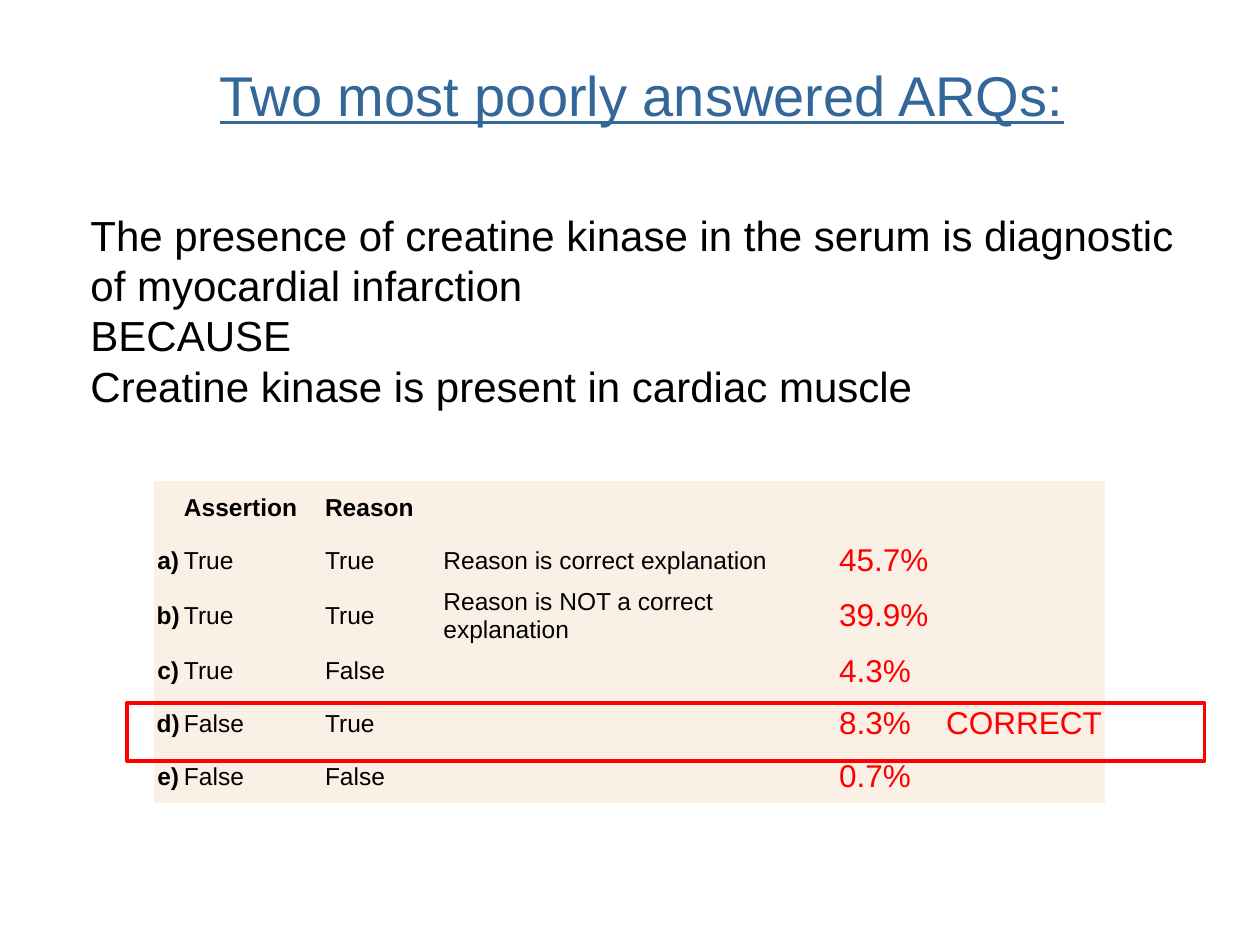
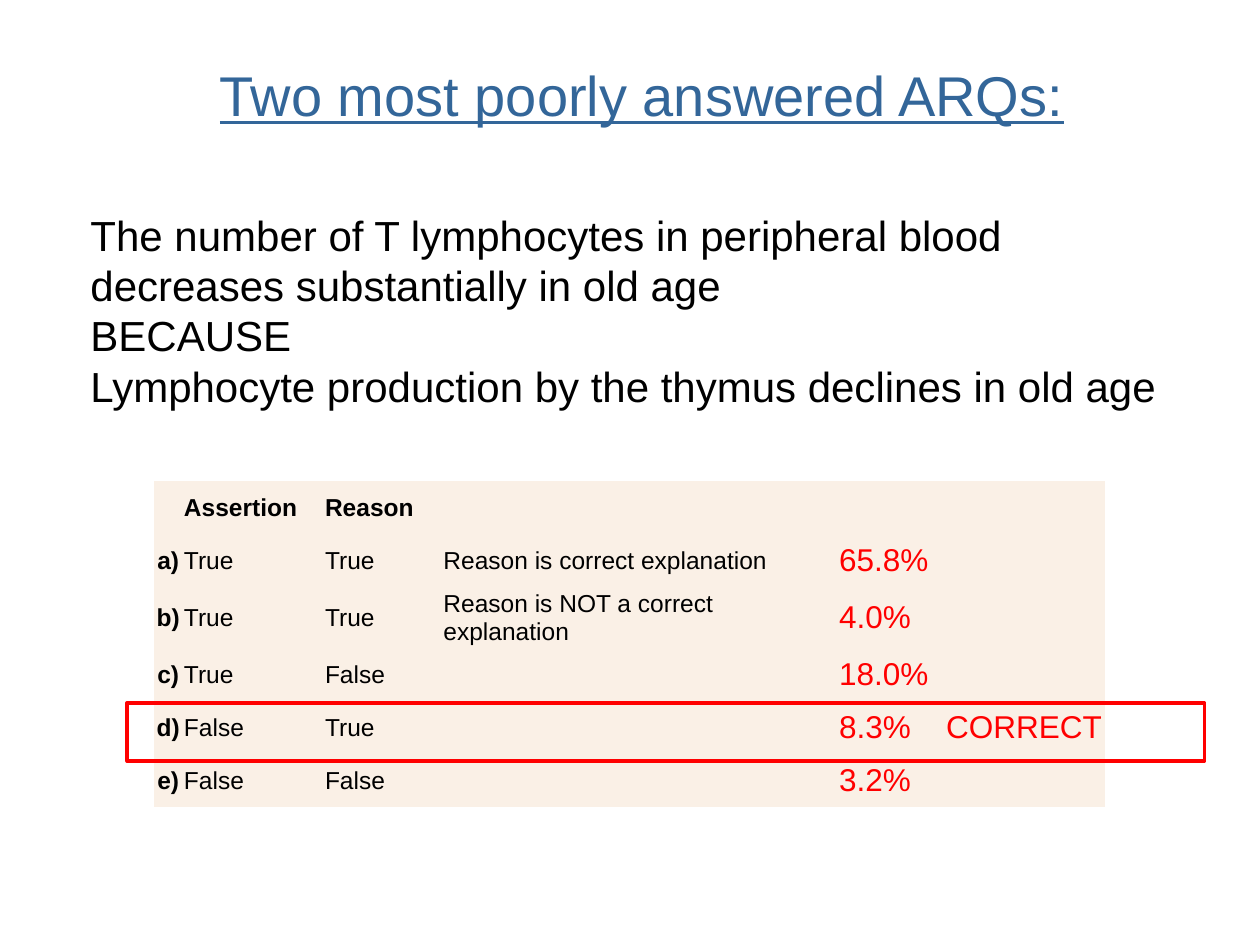
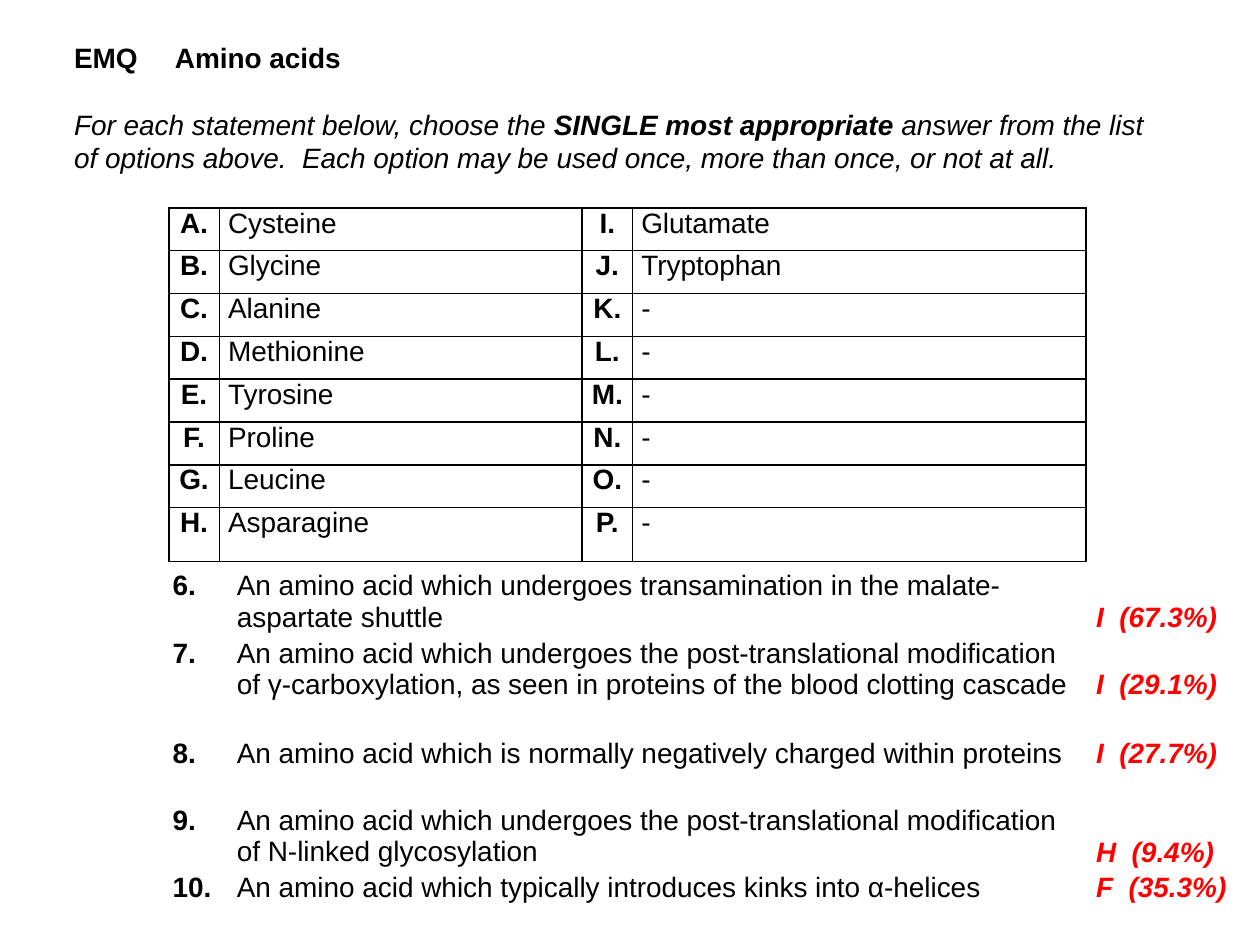
import pptx
import pptx.dml.color
import pptx.enum.shapes
import pptx.enum.text
import pptx.oxml
import pptx.oxml.ns
import pptx.util

Inches = pptx.util.Inches
Pt = pptx.util.Pt
Align = pptx.enum.text.PP_ALIGN
Anchor = pptx.enum.text.MSO_ANCHOR

HUES = {"ink": "000000", "title": "336699", "red": "FF0000", "linen": "FAF0E6"}
FACE = "Arial"
LEAD = 1.2
PLAIN = "{2D5ABB26-0587-4C30-8999-92F81FD0307C}"
NS = pptx.oxml.ns.nsdecls("a")

LOOKS = {
    "title": {"size": Pt(32), "underline": True},
    "body": {"size": Pt(24)},
    "cell": {"size": Pt(14)},
    "label": {"size": Pt(14), "bold": True},
    "score": {"size": Pt(18)},
    "text": {"size": Pt(16)},
    "strong": {"size": Pt(16), "bold": True},
    "slant": {"size": Pt(16), "italic": True},
    "key": {"size": Pt(16), "bold": True, "italic": True},
}
TINTS = {"title": "title", "score": "red"}

CHOICES = [
    ("", "Assertion", "Reason", ""),
    ("a)", "True", "True", "Reason is correct explanation"),
    ("b)", "True", "True", "Reason is NOT a correct explanation"),
    ("c)", "True", "False", ""),
    ("d)", "False", "True", ""),
    ("e)", "False", "False", ""),
]
RIGHT = 4

ITEMS = [
    (("The presence of creatine kinase in the serum is diagnostic of myocardial infarction",
      "BECAUSE", "Creatine kinase is present in cardiac muscle"),
     ("", "45.7%", "39.9%", "4.3%", "8.3%\tCORRECT", "0.7%")),
    (("The number of T lymphocytes in peripheral blood decreases substantially in old age",
      "BECAUSE", "Lymphocyte production by the thymus declines in old age"),
     ("", "65.8%", "4.0%", "18.0%", "8.3%\tCORRECT", "3.2%")),
]

ACIDS = ["Cysteine", "Glycine", "Alanine", "Methionine", "Tyrosine", "Proline",
         "Leucine", "Asparagine", "Glutamate", "Tryptophan"] + ["-"] * 6

CLUES = [
    ("An amino acid which undergoes transamination in the malate-aspartate shuttle",
     "I  (67.3%)", 0.53, 0.25),
    ("An amino acid which undergoes the post-translational modification of "
     "γ-carboxylation, as seen in proteins of the blood clotting cascade",
     "I  (29.1%)", 0.8, 0.25),
    ("An amino acid which is normally negatively charged within proteins",
     "I  (27.7%)", 0.53, 0),
    ("An amino acid which undergoes the post-translational modification of "
     "N-linked glycosylation", "H  (9.4%)", 0.53, 0.25),
    ("An amino acid which typically introduces kinks into α-helices",
     "F  (35.3%)", 0.43, 0),
]


def apply(item, vals):
    """Set each named value on the item."""
    for name, val in vals.items():
        setattr(item, name, val)


def tone(name):
    """Return a palette colour."""
    return pptx.dml.color.RGBColor.from_string(HUES[name])


def write(para, text, look, hue=None):
    """Add a run in the given look."""
    run = para.add_run()
    run.text = text
    apply(run.font, {"name": FACE, **LOOKS[look]})
    run.font.color.rgb = tone(hue or TINTS.get(look, "ink"))


def stop(para, gap):
    """Add a left tab stop to a paragraph."""
    tabs = pptx.oxml.parse_xml(
        f'<a:tabLst {NS}><a:tab pos="{Inches(gap)}" algn="l"/></a:tabLst>')
    para._p.get_or_add_pPr().append(tabs)


def frame(slide, box, wrap=True):
    """Add a text box and return its frame."""
    area = slide.shapes.add_textbox(*map(Inches, box)).text_frame
    area.word_wrap = wrap
    return area


def lead(para, look, **vals):
    """Space the lines of a paragraph by its text size."""
    apply(para, {"line_spacing": Pt(LOOKS[look]["size"].pt * LEAD), **vals})


def grid(slide, box, cols, rows):
    """Add a plain table with the given column widths and row heights."""
    table = slide.shapes.add_table(len(rows), len(cols), *map(Inches, box)).table
    apply(table, {"first_row": False, "horz_banding": False})
    table._tbl.tblPr.find(pptx.oxml.ns.qn("a:tableStyleId")).text = PLAIN
    for col, wide in zip(table.columns, cols):
        col.width = Inches(wide)
    for row, high in zip(table.rows, rows):
        row.height = Inches(high)
    return table


def fill(cell, text, look, hue=None, align=None, side=0.07, edge=0,
         drop=0, anchor=Anchor.TOP, back=None):
    """Set the text, margins and fill of a cell."""
    apply(cell, {"margin_left": Inches(side), "margin_right": Inches(side),
                 "margin_top": Inches(edge + drop), "margin_bottom": Inches(edge),
                 "vertical_anchor": anchor})
    if back:
        cell.fill.solid()
        cell.fill.fore_color.rgb = tone(back)
    else:
        cell.fill.background()
    para = cell.text_frame.paragraphs[0]
    if align is not None:
        para.alignment = align
    if "\t" in text:
        stop(para, 0.85)
    if text:
        write(para, text, look, hue)


def rule(cell):
    """Draw a thin line on all sides of a cell."""
    props = cell._tc.get_or_add_tcPr()
    for spot, side in enumerate(("lnL", "lnR", "lnT", "lnB")):
        props.insert(spot, pptx.oxml.parse_xml(
            f'<a:{side} {NS} w="{Pt(1)}"><a:solidFill>'
            f'<a:srgbClr val="{HUES["ink"]}"/></a:solidFill></a:{side}>'))


def head(slide, box):
    """Place the shared question title."""
    para = frame(slide, box, False).paragraphs[0]
    lead(para, "title", alignment=Align.CENTER)
    write(para, "Two most poorly answered ARQs:", "title")


def claim(slide, box, lines):
    """Place the assertion and its reason."""
    area = frame(slide, box)
    for num, line in enumerate(lines):
        para = area.add_paragraph() if num else area.paragraphs[0]
        lead(para, "body")
        write(para, line, "body")


def votes(slide, box, scores):
    """Place the answer table and frame the right answer."""
    left, top, wide, high = box
    step = 0.42
    table = grid(slide, box, (0.23, 1.12, 0.94, 3.14, 2.12), [step] * len(CHOICES))
    for row, (words, score) in enumerate(zip(CHOICES, scores)):
        for col, text in enumerate((*words, score)):
            look = "label" if row == 0 or col == 0 else "score" if col == 4 else "cell"
            fill(table.cell(row, col), text, look, side=0.01, edge=0.01,
                 align=None if col else Align.CENTER,
                 anchor=Anchor.MIDDLE, back="linen")
    mark = slide.shapes.add_shape(
        pptx.enum.shapes.MSO_SHAPE.RECTANGLE, Inches(left - 0.21),
        Inches(top + RIGHT * step + 0.08), Inches(wide + 1), Inches(0.46))
    mark.shadow.inherit = False
    mark.fill.background()
    mark.line.color.rgb = tone("red")
    mark.line.width = Pt(2.25)


def intro(slide, box):
    """Place the heading and the task."""
    area = frame(slide, box)
    para = area.paragraphs[0]
    lead(para, "strong")
    stop(para, 0.8)
    write(para, "EMQ\tAmino acids", "strong")
    para = area.add_paragraph()
    lead(para, "slant", space_before=Pt(19.2))
    write(para, "For each statement below, choose the ", "slant")
    write(para, "SINGLE most appropriate", "key")
    write(para, " answer from the list ", "slant")
    para.add_line_break()
    write(para, "of options above.  Each option may be used once, "
          "more than once, or not at all.", "slant")


def acids(slide, box):
    """Place the lettered options in two ruled columns."""
    count = len(ACIDS) // 2
    table = grid(slide, box, (0.4, 2.88, 0.4, 3.6), [0.34] * (count - 1) + [0.43])
    for num, name in enumerate(ACIDS):
        half, row = divmod(num, count)
        mark, word = (table.cell(row, 2 * half + col) for col in (0, 1))
        fill(mark, chr(ord("A") + num) + ".", "strong", align=Align.CENTER)
        fill(word, name, "text")
        rule(mark)
        rule(word)


def clues(slide, box):
    """Place the numbered statements and their answers."""
    table = grid(slide, box, (0.51, 6.82, 1.2), [clue[2] for clue in CLUES])
    for row, (text, reply, high, drop) in enumerate(CLUES):
        fill(table.cell(row, 0), f"{row + 6}.", "strong")
        fill(table.cell(row, 1), text, "text")
        fill(table.cell(row, 2), reply, "key", hue="red", drop=drop)


def main():
    """Build the three slides."""
    deck = pptx.Presentation()
    apply(deck, {"slide_width": Inches(10), "slide_height": Inches(7.5)})
    blank = deck.slide_layouts[6]
    for lines, scores in ITEMS:
        slide = deck.slides.add_slide(blank)
        votes(slide, (1.22, 3.82, 7.55, 2.52), scores)
        head(slide, (1.62, 0.43, 6.95, 0.64))
        claim(slide, (0.62, 1.61, 8.94, 1.72), lines)
    slide = deck.slides.add_slide(blank)
    acids(slide, (1.34, 1.65, 7.28, 2.81))
    clues(slide, (1.3, 4.53, 8.53, 2.82))
    intro(slide, (0.49, 0.27, 8.86, 1.45))
    deck.save("out.pptx")


if __name__ == "__main__":
    main()
